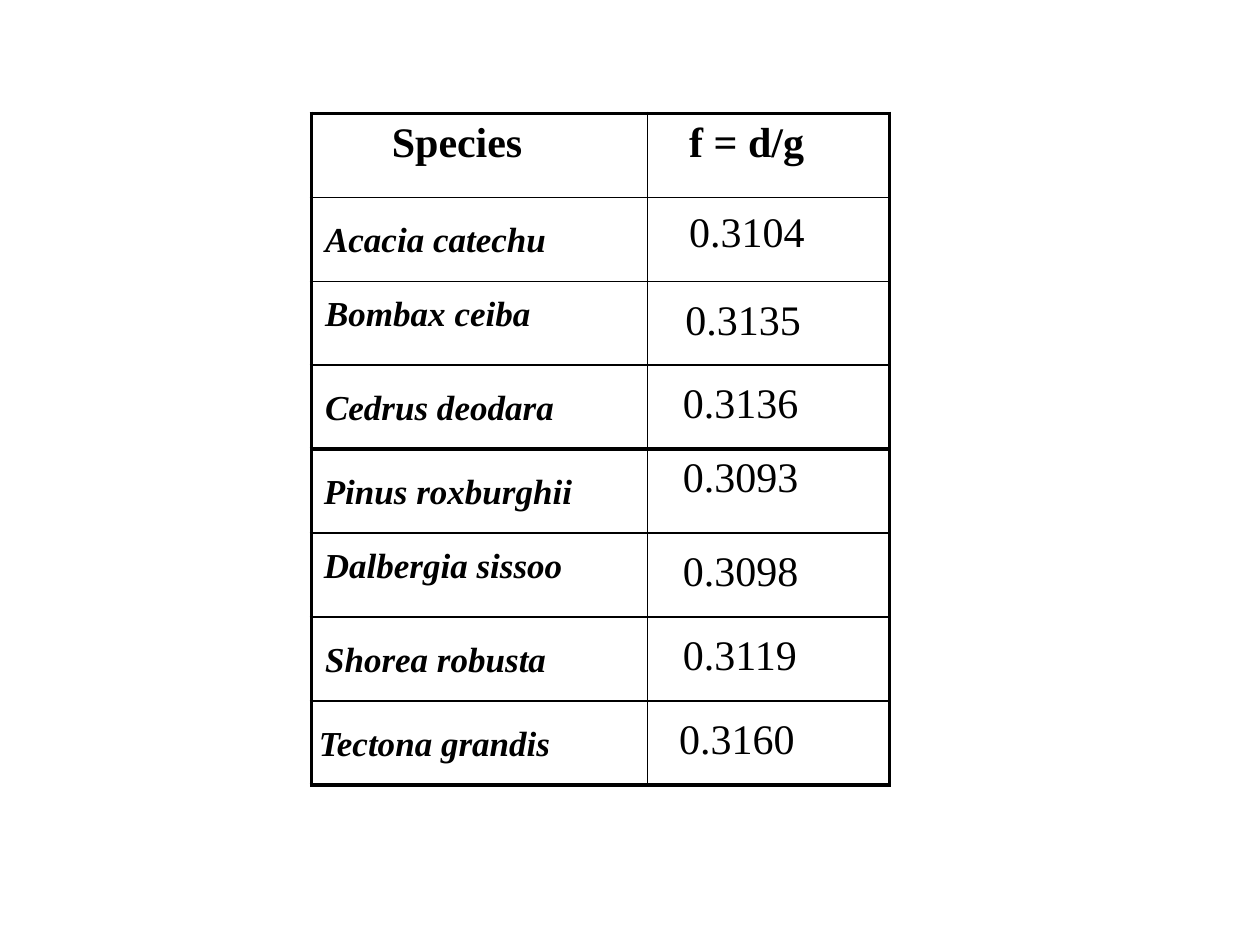
from lxml import etree
from pptx import Presentation
from pptx.dml.color import RGBColor
from pptx.oxml.ns import qn
from pptx.util import Inches, Pt

FONT = "Times New Roman"
BLACK = "000000"
THIN, THICK = 1, 2.25
THICK_ABOVE, THICK_BELOW = (0, 4), (3, 7)
COLUMN_WIDTHS = (2.67, 1.92)

# Each cell: text, left margin, top margin
ROWS = [
    (("Species", 0.64, 0.05), ("f = d/g", 0.33, 0.05)),
    (("Acacia catechu", 0.11, 0.19), ("0.3104", 0.33, 0.1)),
    (("Bombax ceiba", 0.11, 0.11), ("0.3135", 0.3, 0.13)),
    (("Cedrus deodara", 0.11, 0.19), ("0.3136", 0.28, 0.13)),
    (("Pinus roxburghii", 0.1, 0.19), ("0.3093", 0.28, 0.05)),
    (("Dalbergia sissoo", 0.1, 0.11), ("0.3098", 0.28, 0.13)),
    (("Shorea robusta", 0.11, 0.19), ("0.3119", 0.28, 0.13)),
    (("Tectona grandis", 0.06, 0.19), ("0.3160", 0.25, 0.13)),
]


def rgb(value):
    """Return the colour for a hex string."""
    return RGBColor.from_string(value)


def set_borders(cell, widths):
    """Draw solid borders; widths maps each side (L, R, T, B) to points."""
    tcPr = cell._tc.get_or_add_tcPr()
    for side, width in widths.items():
        ln = etree.SubElement(tcPr, qn(f"a:ln{side}"), w=str(Pt(width)))
        fill = etree.SubElement(ln, qn("a:solidFill"))
        etree.SubElement(fill, qn("a:srgbClr"), val=BLACK)


def fill_cell(cell, row, col, text, left, top):
    """Write and format one cell according to its row and column."""
    set_borders(cell, {
        "L": THICK if col == 0 else THIN,
        "R": THICK if col == 1 else THIN,
        "T": THICK if row in THICK_ABOVE else THIN,
        "B": THICK if row in THICK_BELOW else THIN,
    })
    cell.fill.background()
    cell.margin_left, cell.margin_top = Inches(left), Inches(top)
    cell.margin_right = cell.margin_bottom = 0
    p = cell.text_frame.paragraphs[0]
    p.text = text
    is_header, is_species = row == 0, row > 0 and col == 0
    p.font.name = FONT
    p.font.size = Pt(20 if is_species else 24)
    p.font.bold = is_header or is_species
    p.font.italic = is_species
    p.font.color.rgb = rgb(BLACK)


def add_species_table(s, left, top, width, height):
    """Add the table of species and their f values in the given box."""
    table = s.shapes.add_table(len(ROWS), len(COLUMN_WIDTHS),
                               left, top, width, height).table
    table.first_row = table.horz_banding = False
    for column, column_width in zip(table.columns, COLUMN_WIDTHS):
        column.width = Inches(column_width)
    for row, cells in enumerate(ROWS):
        for col, content in enumerate(cells):
            fill_cell(table.cell(row, col), row, col, *content)


def main():
    """Build and save the slide."""
    prs = Presentation()
    prs.slide_width, prs.slide_height = Inches(10), Inches(7.5)
    s = prs.slides.add_slide(prs.slide_layouts[6])
    add_species_table(s, Inches(2.47), Inches(0.9), Inches(4.59), Inches(5.33))
    prs.save("out.pptx")


if __name__ == "__main__":
    main()
